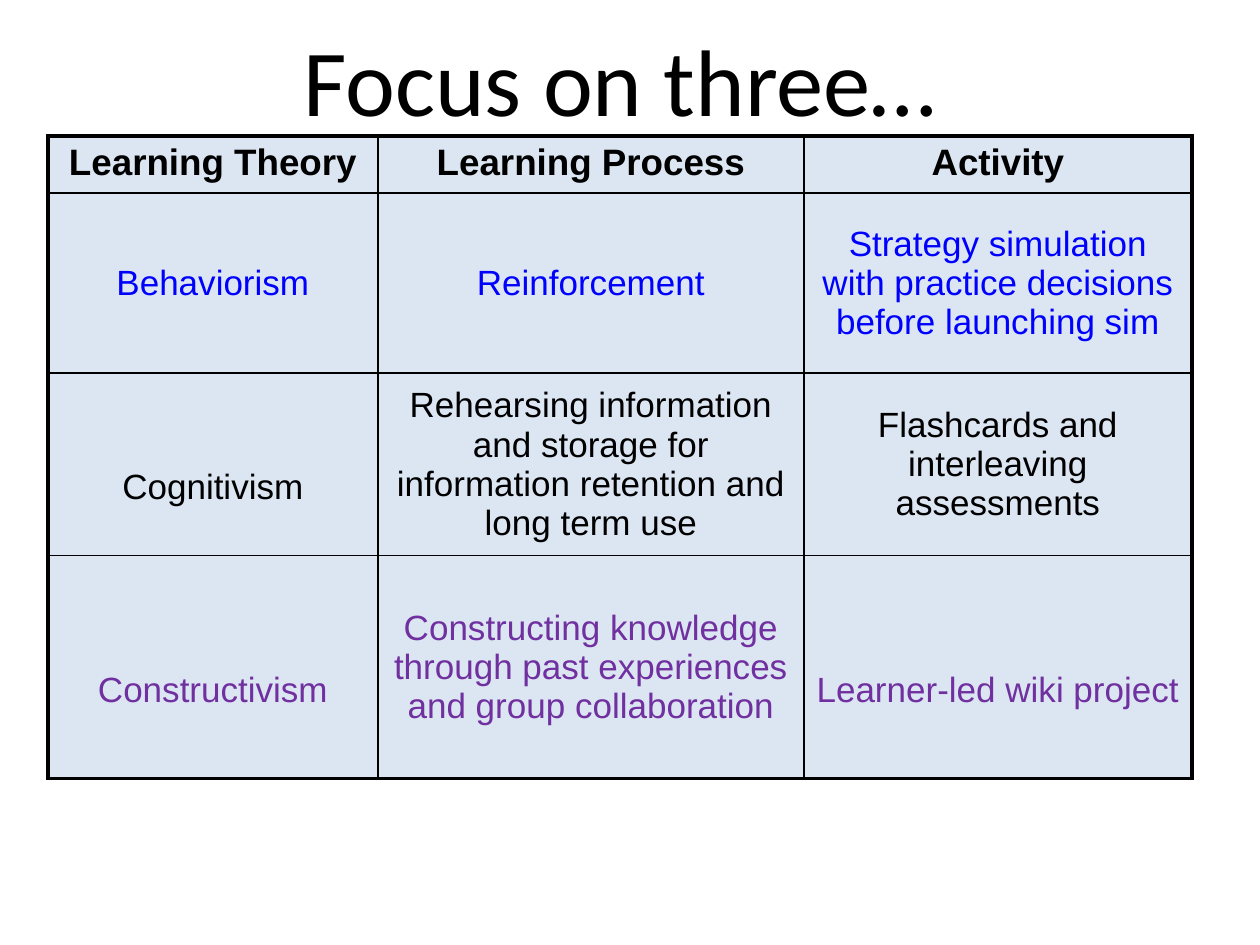
import dataclasses

import lxml.etree
import pptx
import pptx.dml.color
import pptx.enum.text
import pptx.oxml.ns
import pptx.util

Inches = pptx.util.Inches
Anchor = pptx.enum.text.MSO_ANCHOR


@dataclasses.dataclass(frozen=True)
class Theme:
    title_font: str = "Calibri"
    table_font: str = "Arial"
    title_size: float = 54
    header_size: float = 21
    body_size: float = 20
    black: str = "000000"
    blue: str = "0000FF"
    purple: str = "7030A0"
    cell_fill: str = "DCE6F2"
    outer_line: float = 2.25
    inner_line: float = 1


class SlideBuilder:
    def __init__(self, deck, theme):
        self.theme = theme
        self.slide = deck.slides.add_slide(deck.slide_layouts[6])

    def centered_text(self, frame, text, color, formats):
        para = frame.paragraphs[0]
        para.alignment = pptx.enum.text.PP_ALIGN.CENTER
        span = para.add_run()
        span.text = text
        for name, value in formats.items():
            setattr(span.font, name, value)
        span.font.color.rgb = pptx.dml.color.RGBColor.from_string(color)

    def title(self, text, left, top, width, height):
        box = self.slide.shapes.add_textbox(
            Inches(left), Inches(top), Inches(width), Inches(height))
        frame = box.text_frame
        frame.word_wrap = True
        frame.vertical_anchor = Anchor.MIDDLE
        formats = {"name": self.theme.title_font,
                   "size": pptx.util.Pt(self.theme.title_size)}
        self.centered_text(frame, text, self.theme.black, formats)

    def border(self, cell, side, points):
        properties = cell._tc.get_or_add_tcPr()
        line = lxml.etree.SubElement(
            properties, pptx.oxml.ns.qn(f"a:ln{side}"), w=str(pptx.util.Pt(points)))
        fill = lxml.etree.SubElement(line, pptx.oxml.ns.qn("a:solidFill"))
        lxml.etree.SubElement(
            fill, pptx.oxml.ns.qn("a:srgbClr"), val=self.theme.black)

    def table(self, rows, colors, lowered, left, top, widths, heights):
        theme = self.theme
        table = self.slide.shapes.add_table(
            len(heights), len(widths), Inches(left), Inches(top),
            Inches(sum(widths)), Inches(sum(heights))).table
        for column, width in zip(table.columns, widths):
            column.width = Inches(width)
        for row, height in zip(table.rows, heights):
            row.height = Inches(height)
        for r, texts in enumerate(rows):
            header = r == 0
            formats = {
                "name": theme.table_font,
                "size": pptx.util.Pt(theme.header_size if header else theme.body_size),
                "bold": header,
            }
            for c, text in enumerate(texts):
                cell = table.cell(r, c)
                edges = {"L": c == 0, "R": c == len(widths) - 1,
                         "T": header, "B": r == len(heights) - 1}
                for side, outer in edges.items():
                    self.border(cell, side,
                                theme.outer_line if outer else theme.inner_line)
                cell.fill.solid()
                cell.fill.fore_color.rgb = pptx.dml.color.RGBColor.from_string(
                    theme.cell_fill)
                cell.vertical_anchor = Anchor.TOP if header else Anchor.MIDDLE
                if text in lowered:
                    cell.margin_top = Inches(0.42)
                self.centered_text(cell.text_frame, text, colors[r], formats)


def main():
    deck = pptx.Presentation()
    deck.slide_width, deck.slide_height = Inches(10), Inches(7.5)
    theme = Theme()
    builder = SlideBuilder(deck, theme)
    builder.title("Focus on three…", 0.42, 0, 9, 1.25)
    theories = [
        ("Learning Theory", "Learning Process", "Activity"),
        ("Behaviorism", "Reinforcement",
         "Strategy simulation with practice decisions before launching sim"),
        ("Cognitivism",
         "Rehearsing information and storage for information retention and long term use",
         "Flashcards and interleaving assessments"),
        ("Constructivism",
         "Constructing knowledge through past experiences and group collaboration",
         "Learner-led wiki project"),
    ]
    builder.table(
        theories,
        colors=[theme.black, theme.blue, theme.black, theme.purple],
        lowered={"Cognitivism", "Constructivism", "Learner-led wiki project"},
        left=0.38, top=1.08,
        widths=[2.62, 3.38, 3.08],
        heights=[0.45, 1.43, 1.45, 1.77])
    deck.save("out.pptx")


if __name__ == "__main__":
    main()
